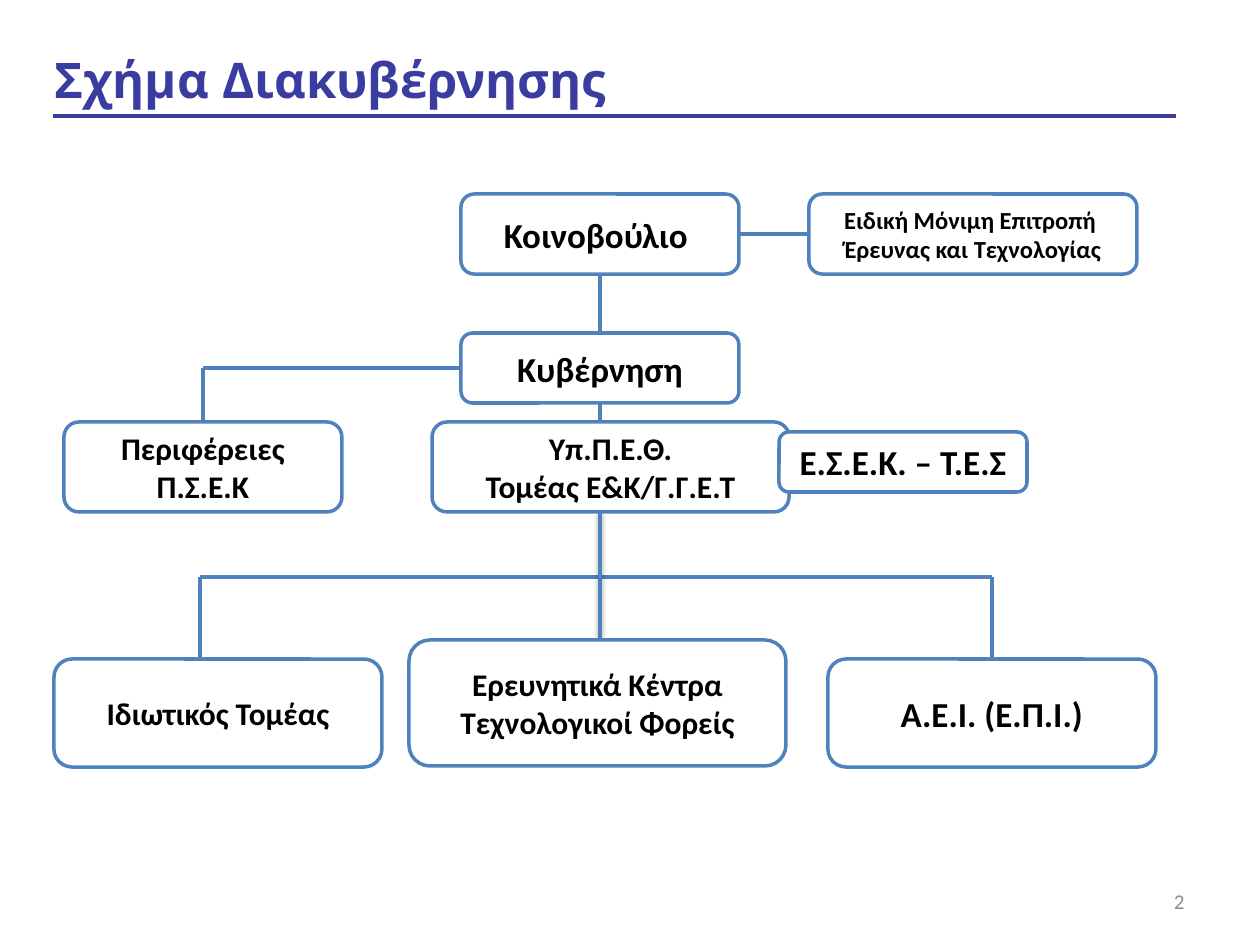
from dataclasses import dataclass

from lxml.etree import SubElement
from pptx import Presentation
from pptx.dml.color import RGBColor
from pptx.enum.shapes import MSO_CONNECTOR as Connector, MSO_SHAPE as Shape
from pptx.enum.text import MSO_ANCHOR as Anchor, MSO_AUTO_SIZE as AutoSize, PP_ALIGN as Align
from pptx.oxml.ns import qn
from pptx.util import Emu, Pt

PX_PER_INCH = 126
TOP, LEFT, BOTTOM, RIGHT = range(4)


def px(length):
    return Emu(round(length * 914400 / PX_PER_INCH))


@dataclass(frozen=True)
class Theme:
    title_color: RGBColor = RGBColor(0x3A, 0x3C, 0xA0)
    line_color: RGBColor = RGBColor(0x4F, 0x81, 0xBD)
    box_fill: RGBColor = RGBColor(0xFF, 0xFF, 0xFF)
    text_color: RGBColor = RGBColor(0, 0, 0)
    number_color: RGBColor = RGBColor(0x8C, 0x8C, 0x8C)
    title_font: str = "Quicksand"
    body_font: str = "Calibri"
    title_size: int = 28
    large: int = 20
    medium: int = 18
    small: int = 14
    number_size: int = 12
    rule_width: float = 2.5
    line_width: float = 2


class OrgChart:
    def __init__(self, slide, theme):
        self.slide = slide
        self.theme = theme

    def set_text(self, shape, text, size, color, font, align, anchor, bold=True):
        frame = shape.text_frame
        frame.word_wrap = True
        frame.auto_size = AutoSize.NONE
        frame.vertical_anchor = anchor
        frame.text = text
        for paragraph in frame.paragraphs:
            paragraph.alignment = align
            paragraph.font.name = font
            paragraph.font.size = Pt(size)
            paragraph.font.bold = bold
            paragraph.font.color.rgb = color

    def title(self, text, left, top, width, height):
        shape = self.slide.shapes.title
        shape.left, shape.top, shape.width, shape.height = map(px, (left, top, width, height))
        self.set_text(shape, text, self.theme.title_size, self.theme.title_color,
                      self.theme.title_font, Align.LEFT, Anchor.TOP)

    def page_number(self, text, left, top, width, height):
        shape = self.slide.shapes.add_textbox(*map(px, (left, top, width, height)))
        self.set_text(shape, text, self.theme.number_size, self.theme.number_color,
                      self.theme.body_font, Align.RIGHT, Anchor.MIDDLE, bold=False)

    def box(self, text, size, left, top, width, height):
        shape = self.slide.shapes.add_shape(
            Shape.ROUNDED_RECTANGLE, *map(px, (left, top, width, height)))
        shape.shadow.inherit = False
        shape.fill.solid()
        shape.fill.fore_color.rgb = self.theme.box_fill
        shape.line.color.rgb = self.theme.line_color
        shape.line.width = Pt(self.theme.line_width)
        self.set_text(shape, text, size, self.theme.text_color,
                      self.theme.body_font, Align.CENTER, Anchor.MIDDLE)
        return shape

    def line(self, start, end, color=None, width=None, shadow=False):
        """Draw a line; each end is an (x, y) point or a (box, side) pair."""
        points = [(0, 0) if hasattr(first, "text_frame") else (first, second)
                  for first, second in (start, end)]
        connector = self.slide.shapes.add_connector(
            Connector.STRAIGHT, *(px(value) for point in points for value in point))
        for (target, side), join in ((start, connector.begin_connect),
                                     (end, connector.end_connect)):
            if hasattr(target, "text_frame"):
                join(target, side)
        connector.line.color.rgb = color or self.theme.line_color
        connector.line.width = Pt(width or self.theme.line_width)
        effects = SubElement(connector.element.spPr, qn("a:effectLst"))
        if shadow:
            outer = SubElement(effects, qn("a:outerShdw"), blurRad=str(int(Pt(3.1))),
                               dist=str(int(Pt(1.6))), dir="5400000", rotWithShape="0")
            black = SubElement(outer, qn("a:srgbClr"), val="000000")
            SubElement(black, qn("a:alpha"), val="38000")


def main():
    presentation = Presentation()
    presentation.slide_width = px(1260)
    presentation.slide_height = px(945)
    title_only = presentation.slide_layouts[5]
    theme = Theme()
    chart = OrgChart(presentation.slides.add_slide(title_only), theme)

    chart.title("Σχήμα Διακυβέρνησης", 42, 43, 1134, 72)
    chart.line((53, 116), (1176, 116), theme.title_color, theme.rule_width)
    chart.page_number("2", 903, 876, 294, 50)

    trunk, branch = 600, 577
    private_x, university_x = 200, 992
    chart.line((private_x, branch), (university_x, branch))
    chart.line((trunk, 511), (trunk, 640), shadow=True)

    parliament = chart.box("Κοινοβούλιο ", theme.large, 461, 194, 278, 80)
    committee = chart.box("Ειδική Μόνιμη Επιτροπή \nΈρευνας και Τεχνολογίας",
                          theme.small, 809, 194, 328, 80)
    government = chart.box("Κυβέρνηση", theme.large, 461, 333, 278, 70)
    regions = chart.box("Περιφέρειες\nΠ.Σ.Ε.Κ", theme.medium, 64, 422, 278, 90)
    chart.box("Υπ.Π.Ε.Θ.\nΤομέας Ε&Κ/Γ.Γ.Ε.Τ", theme.medium, 432, 422, 357, 90)
    chart.box("Ε.Σ.Ε.Κ. – Τ.Ε.Σ", theme.large, 779, 432, 248, 60)
    chart.box("Ιδιωτικός Τομέας", theme.medium, 54, 659, 328, 108)
    chart.box("Ερευνητικά Κέντρα\nΤεχνολογικοί Φορείς", theme.medium, 409, 640, 377, 126)
    universities = chart.box("A.E.I. (Ε.Π.Ι.)", theme.large, 828, 659, 328, 108)

    regions_x, government_y = 203, 368
    chart.line((parliament, RIGHT), (committee, LEFT))
    chart.line((parliament, BOTTOM), (government, TOP))
    chart.line((government, BOTTOM), (trunk, 422))
    chart.line((government, LEFT), (regions_x, government_y))
    chart.line((regions_x, government_y), (regions, TOP))
    chart.line((private_x, branch), (private_x, 659))
    chart.line((university_x, branch), (universities, TOP))

    presentation.save("out.pptx")


if __name__ == "__main__":
    main()
